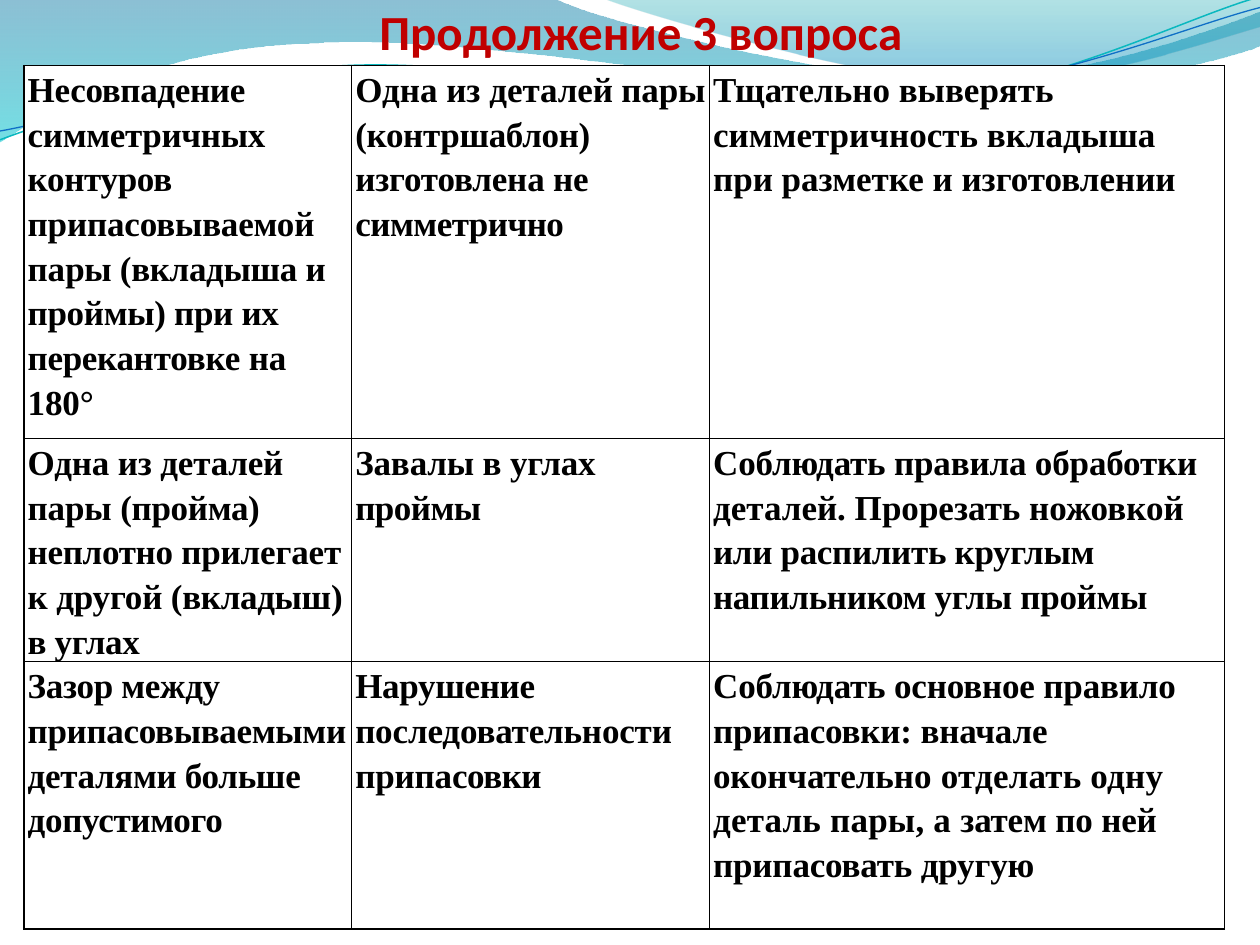
from lxml.etree import SubElement
from pptx import Presentation
from pptx.dml.color import RGBColor as RGB
from pptx.enum.text import MSO_ANCHOR as ANCHOR, MSO_AUTO_SIZE as FIT, PP_ALIGN as ALIGN
from pptx.oxml.ns import qn
from pptx.util import Inches, Pt

COLORS = {
    "title": "C00000", "text": "000000", "cell": "FFFFFF", "border": "000000",
    "wave_top": "0074A1", "wave_bottom": "00C6CF",
    "crest_top": "00A1A9", "crest_bottom": "008BBF",
    "teal_line": "0AB8BF", "blue_line": "0F6FC6",
}
WAVE = [(0, 0), (4.4, -0.01), (4.76, 0.17, 6.64, 0.63, 7.58, 0.63),
        (8.53, 0.63, 9.58, 0.26, 10, 0.09), (10.01, 0.36),
        (9.83, 0.44, 8.7, 0.76, 7.46, 0.75), (6.22, 0.75, 3.82, 0.28, 2.57, 0.34),
        (1.29, 0.36, 0.46, 0.83, -0.01, 1.13), (0, 0)]
CREST = [(4.79, -0.01), (5.09, 0.11, 6.82, 0.62, 7.69, 0.65),
         (8.56, 0.69, 9.61, 0.32, 10, 0.21), (10, 0), (4.79, -0.01)]
TEAL_LINE = [(0, 1.11), (0.48, 0.93, 1.58, 0.57, 2.77, 0.52),
             (3.95, 0.47, 5.93, 0.89, 7.13, 0.8), (8.33, 0.71, 9.38, 0.15, 9.98, -0.02)]
BLUE_LINE = [(0, 1.04), (0.47, 0.96, 1.64, 0.61, 2.83, 0.56),
             (4.03, 0.51, 5.97, 0.84, 7.17, 0.75), (8.36, 0.67, 9.41, 0.21, 10, 0.06)]
COL_WIDTHS = [2.6, 2.84, 4.09]
ROW_HEIGHTS = [2.96, 1.69, 2.12]
DEFECTS = [
    ([("Несовпадение симметричных контуров ", -20), ("припасовываемой па", -10),
      ("ры (вкладыша и проймы) при их перекан", -20), ("товке на 180°", -10)],
     [("Одна из дета", 0), ("лей пары ", -10), ("(контршаблон) ", -20),
      ("изготовлена не ", -10), ("симметрично", -30)],
     [("Тщательно выверять симметричность вкладыша при разметке и изготовлении", 0)]),
    ([("Одна из деталей пары ", -10), ("(пройма) неплотно ", -20),
      ("прилегает к другой ", -10), ("(вкладыш) в углах", -20)],
     [("Завалы в углах ", -10), ("проймы", -30)],
     [("Соблюдать правила обработки ", -10), ("деталей. Прорезать ножовкой ", 0),
      ("или распилить круглым напильником углы проймы", -20)]),
    ([("Зазор между припасовываемыми деталями больше допустимого", -20)],
     [("Нарушение по", -20), ("следовательности припа", -10), ("совки", -30)],
     [("Соблюдать основное правило припасовки: вначале окончатель", -10),
      ("но отделать одну деталь пары, а ", 10), ("затем по ней припасовать другую", -10)]),
]


def color(name):
    """Return the named colour."""
    return RGB.from_string(COLORS[name])


def add_outline(s, path, close):
    """Add a freeform whose six-number segments are cubic curves."""
    start, *rest = [(Inches(seg[i]), Inches(seg[i + 1]))
                    for seg in path for i in range(0, len(seg), 2)]
    builder = s.shapes.build_freeform(*start)
    builder.add_line_segments(rest, close=close)
    sp = builder.convert_to_shape()
    sp.shadow.inherit = False
    outline = next(sp.element.iter(qn("a:path")))
    lines = iter(outline.findall(qn("a:lnTo")))
    for seg in path[1:]:
        curve = next(lines)
        if len(seg) == 6:
            curve.tag = qn("a:cubicBezTo")
            for line in (next(lines), next(lines)):
                curve.append(line[0])
                outline.remove(line)
    return sp


def add_wave(s, path, stops):
    """Add a wave with a translucent vertical gradient."""
    sp = add_outline(s, path, True)
    sp.line.fill.background()
    sp.fill.gradient()
    sp.fill.gradient_angle = 270
    for stop, (position, name, _) in zip(sp.fill.gradient_stops, stops):
        stop.position = position
        stop.color.rgb = color(name)
    for clr, (_, _, opacity) in zip(sp.element.spPr.iter(qn("a:srgbClr")), stops):
        SubElement(clr, qn("a:alpha"), val=str(opacity * 1000))


def add_curve(s, path, name, width):
    """Add an open curved line."""
    sp = add_outline(s, path, False)
    sp.fill.background()
    sp.line.color.rgb = color(name)
    sp.line.width = Pt(width)


def add_header_art(s):
    """Draw the waves and lines along the top edge."""
    add_wave(s, WAVE, [(0, "wave_top", 45), (1, "wave_bottom", 55)])
    add_wave(s, CREST, [(0, "crest_top", 30), (0.8, "crest_bottom", 45)])
    add_curve(s, TEAL_LINE, "teal_line", 0.85)
    add_curve(s, BLUE_LINE, "blue_line", 0.75)


def set_title(s, text, left, top, width, height):
    """Place and format the title in front of the header art."""
    title = s.shapes.title
    title.element.getparent().append(title.element)
    title.left, title.top, title.width, title.height = map(Inches, (left, top, width, height))
    tf = title.text_frame
    tf.text = text
    tf.auto_size = FIT.NONE
    tf.vertical_anchor = ANCHOR.BOTTOM
    tf.margin_left, tf.margin_bottom = Inches(0.17), Inches(0.04)
    tf.margin_right = tf.margin_top = 0
    p = tf.paragraphs[0]
    p.alignment = ALIGN.CENTER
    p.font.name, p.font.size, p.font.bold = "Calibri", Pt(28), True
    p.font.color.rgb = color("title")


def set_borders(cell):
    """Draw a thin line on each side of a cell."""
    tc_pr = cell._tc.get_or_add_tcPr()
    for i, side in enumerate(("lnL", "lnR", "lnT", "lnB")):
        ln = tc_pr.makeelement(qn(f"a:{side}"), {"w": str(Pt(1))})
        tc_pr.insert(i, ln)
        SubElement(SubElement(ln, qn("a:solidFill")), qn("a:srgbClr"), val=COLORS["border"])


def fill_cell(cell, runs):
    """Write and format one table cell from runs of text and letter spacing."""
    cell.fill.solid()
    cell.fill.fore_color.rgb = color("cell")
    cell.margin_left = cell.margin_right = Inches(0.03)
    cell.margin_top = cell.margin_bottom = 0
    p = cell.text_frame.paragraphs[0]
    p.line_spacing = 1.15
    p.font.name, p.font.size, p.font.bold = "Times New Roman", Pt(20), True
    p.font.color.rgb = color("text")
    for text, spacing in runs:
        r = p.add_run()
        r.text = text
        r.font._element.set("spc", str(spacing))
    set_borders(cell)


def add_defects_table(s, left, top):
    """Add the table of defects, causes and remedies."""
    table = s.shapes.add_table(len(ROW_HEIGHTS), len(COL_WIDTHS), Inches(left), Inches(top),
                               Inches(sum(COL_WIDTHS)), Inches(sum(ROW_HEIGHTS))).table
    table.first_row = table.horz_banding = False
    for col, width in zip(table.columns, COL_WIDTHS):
        col.width = Inches(width)
    for row, height, texts in zip(table.rows, ROW_HEIGHTS, DEFECTS):
        row.height = Inches(height)
        for cell, runs in zip(row.cells, texts):
            fill_cell(cell, runs)


def main():
    """Build the slide and save it."""
    prs = Presentation()
    prs.slide_width, prs.slide_height = Inches(10), Inches(7.5)
    s = prs.slides.add_slide(prs.slide_layouts[5])
    add_header_art(s)
    set_title(s, "Продолжение 3 вопроса", 0, 0, 10, 0.52)
    add_defects_table(s, 0.19, 0.52)
    prs.save("out.pptx")


if __name__ == "__main__":
    main()
